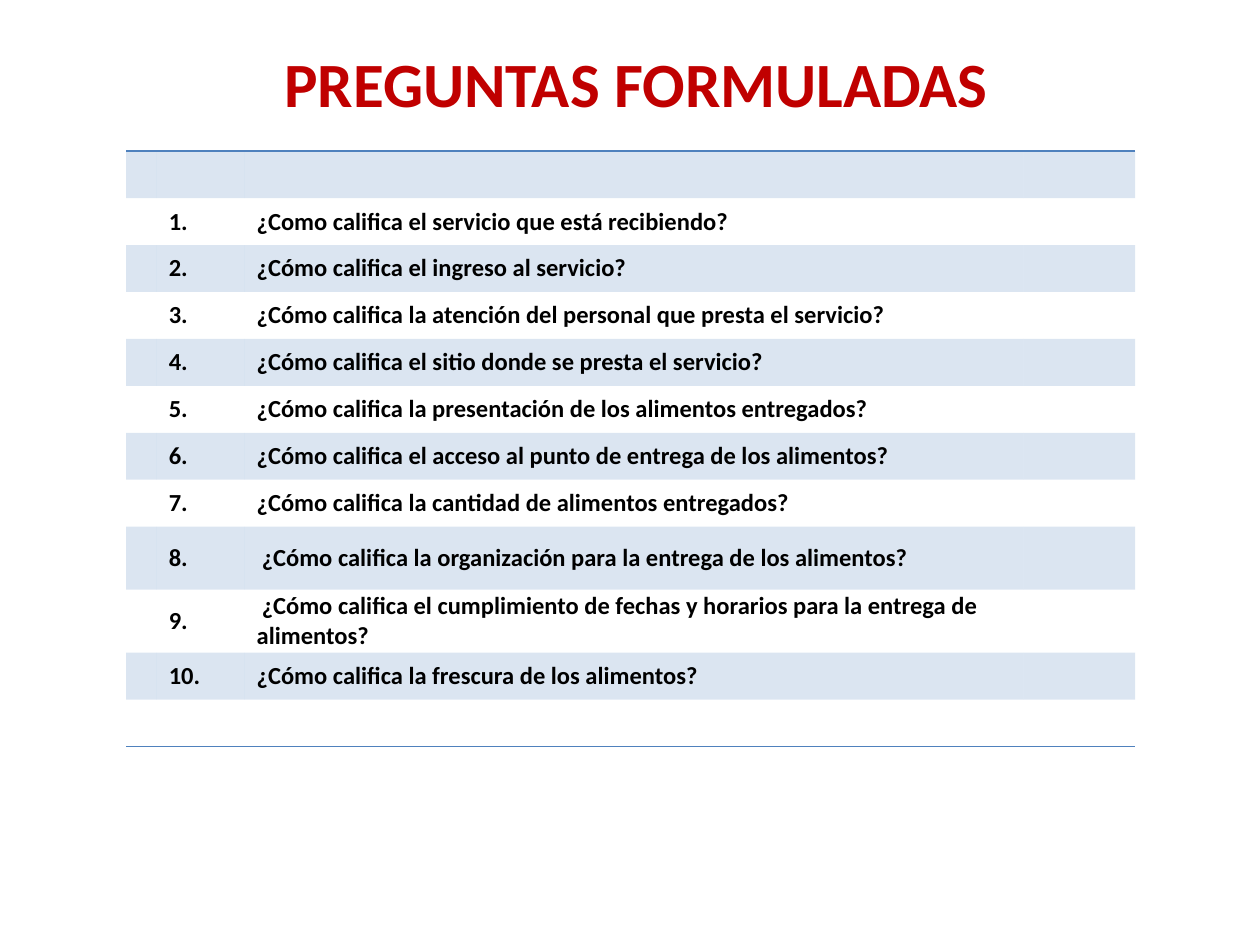
from dataclasses import dataclass

from lxml.etree import SubElement
from pptx import Presentation
from pptx.dml.color import RGBColor
from pptx.enum.text import MSO_ANCHOR, PP_ALIGN
from pptx.oxml import parse_xml
from pptx.oxml.ns import nsdecls, qn
from pptx.util import Inches, Pt

SLIDE_W, SLIDE_H = Inches(10), Inches(7.5)
NO_STYLE = "{2D5ABB26-0587-4C30-8999-92F81FD0307C}"


@dataclass(frozen=True)
class Theme:
    font: str = "Calibri"
    title_size: int = 36
    body_size: int = 14
    title: str = "C00000"
    text: str = "000000"
    accent: str = "4F81BD"
    band_alpha: int = 20
    rule_width: int = 1


THEME = Theme()

QUESTIONS = [
    "¿Como califica el servicio que está recibiendo?",
    "¿Cómo califica el ingreso al servicio?",
    "¿Cómo califica la atención del personal que presta el servicio?",
    "¿Cómo califica el sitio donde se presta el servicio?",
    "¿Cómo califica la presentación de los alimentos entregados?",
    "¿Cómo califica el acceso al punto de entrega de los alimentos?",
    "¿Cómo califica la cantidad de alimentos entregados?",
    "¿Cómo califica la organización para la entrega de los alimentos?",
    "¿Cómo califica el cumplimiento de fechas y horarios para la entrega de alimentos?",
    "¿Cómo califica la frescura de los alimentos?",
]
TALL_ROWS = {8, 9}  # these questions also have an indented first line
TALL_HEIGHT = Inches(0.5)
FIRST_LINE_INDENT = Inches(0.04)
COLUMN_WIDTHS = [0.23, 0.7, 6.2, 0.89]


def share_box(left, top, width, height):
    """Turn shares of the slide into a box of lengths."""
    return (int(left * SLIDE_W), int(top * SLIDE_H),
            int(width * SLIDE_W), int(height * SLIDE_H))


def style_runs(p, size, color):
    for r in p.runs:
        r.font.name = THEME.font
        r.font.size = Pt(size)
        r.font.bold = True
        r.font.color.rgb = RGBColor.from_string(color)


def add_title(slide, box, text):
    tf = slide.shapes.add_textbox(*box).text_frame
    tf.word_wrap = True
    tf.text = text
    p = tf.paragraphs[0]
    p.alignment = PP_ALIGN.CENTER
    style_runs(p, THEME.title_size, THEME.title)


def fill_cell(cell, banded):
    if not banded:
        cell.fill.background()
        return
    cell.fill.solid()
    cell.fill.fore_color.rgb = RGBColor.from_string(THEME.accent)
    color = cell._tc.tcPr.find(qn("a:solidFill"))[0]
    SubElement(color, qn("a:alpha")).set("val", str(THEME.band_alpha * 1000))


def add_rule(cell, side):
    """Draw a cell border; side is T for top or B for bottom."""
    border = parse_xml(
        f'<a:ln{side} {nsdecls("a")} w="{Pt(THEME.rule_width)}"><a:solidFill>'
        f'<a:srgbClr val="{THEME.accent}"/></a:solidFill></a:ln{side}>')
    cell._tc.get_or_add_tcPr().insert(0, border)


def write_cell(cell, text, indent=0):
    cell.text_frame.text = text
    p = cell.text_frame.paragraphs[0]
    if indent:
        p._p.get_or_add_pPr().set("indent", str(indent))
    style_runs(p, THEME.body_size, THEME.text)


def add_question_table(slide, box, questions):
    """Place the numbered questions between an empty first and last row."""
    last = len(questions) + 1
    frame = slide.shapes.add_table(last + 1, len(COLUMN_WIDTHS), *box)
    table = frame.table
    table.first_row = table.horz_banding = False
    table._tbl.tblPr.find(qn("a:tableStyleId")).text = NO_STYLE

    for column, width in zip(table.columns, COLUMN_WIDTHS):
        column.width = int(box[2] * width / sum(COLUMN_WIDTHS))
    plain_rows = last + 1 - len(TALL_ROWS)
    plain_height = (box[3] - len(TALL_ROWS) * TALL_HEIGHT) // plain_rows

    for i, row in enumerate(table.rows):
        row.height = TALL_HEIGHT if i in TALL_ROWS else plain_height
        for cell in row.cells:
            cell.margin_top = cell.margin_bottom = 0
            cell.vertical_anchor = MSO_ANCHOR.MIDDLE
            fill_cell(cell, banded=i % 2 == 0)
            if i in (0, last):
                add_rule(cell, "T" if i == 0 else "B")

    for i, question in enumerate(questions, start=1):
        write_cell(table.cell(i, 1), f"{i}.")
        write_cell(table.cell(i, 2), question,
                   FIRST_LINE_INDENT if i in TALL_ROWS else 0)


def main():
    prs = Presentation()
    prs.slide_width, prs.slide_height = SLIDE_W, SLIDE_H
    slide = prs.slides.add_slide(prs.slide_layouts[6])
    add_title(slide, share_box(0.15, 0.04, 0.71, 0.09), "PREGUNTAS FORMULADAS")
    add_question_table(slide, share_box(0.1, 0.16, 0.8, 0.63), QUESTIONS)
    prs.save("out.pptx")


if __name__ == "__main__":
    main()
